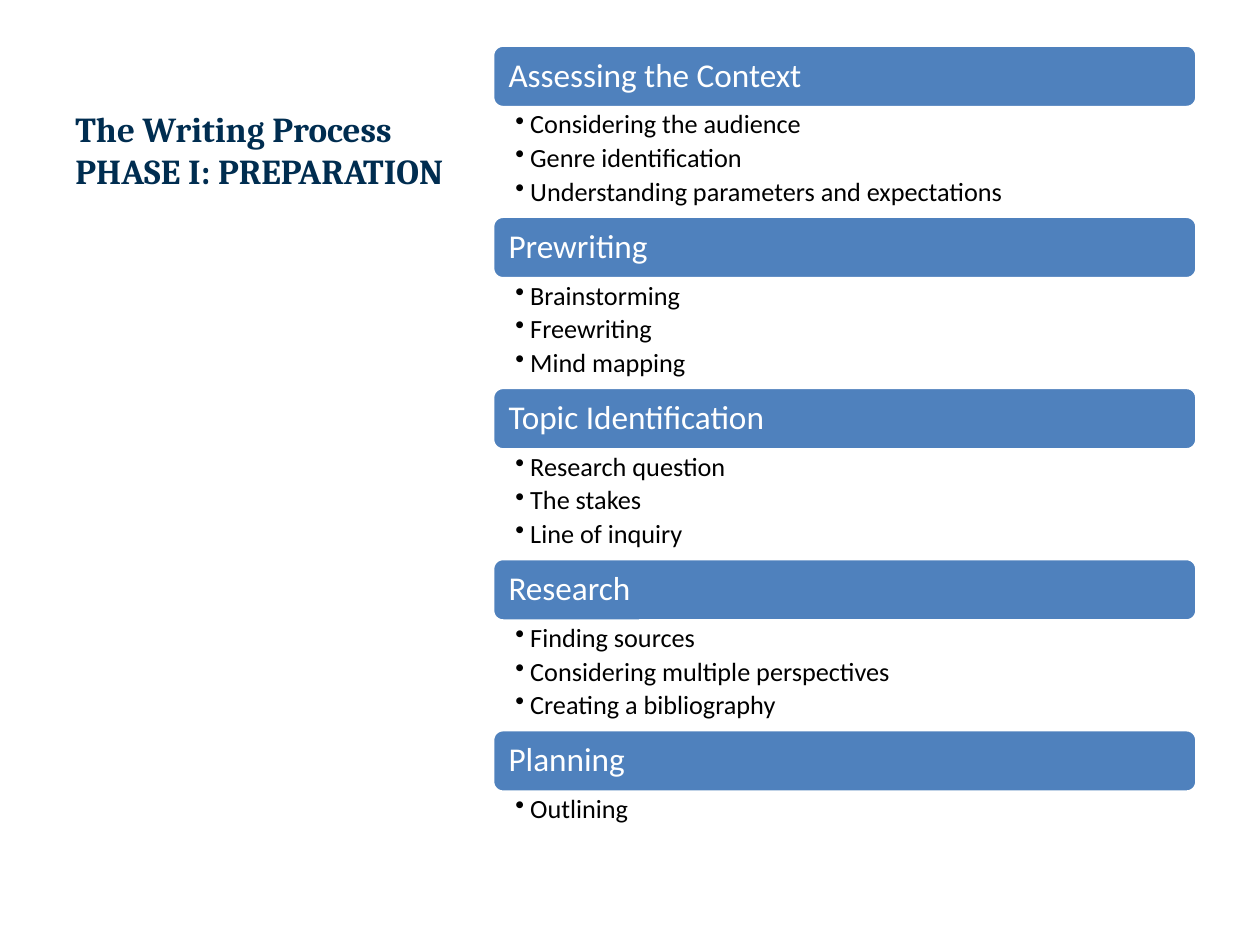
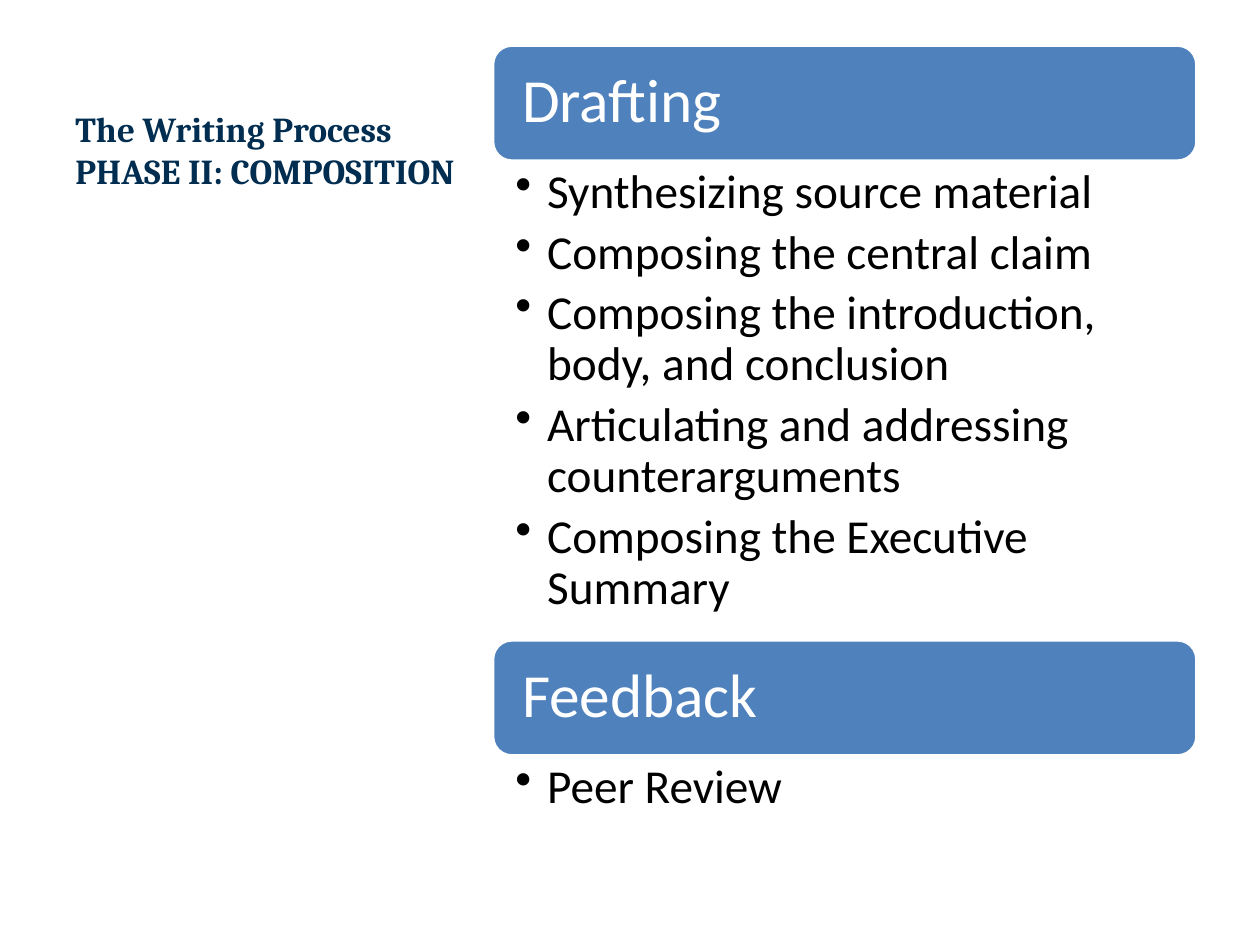
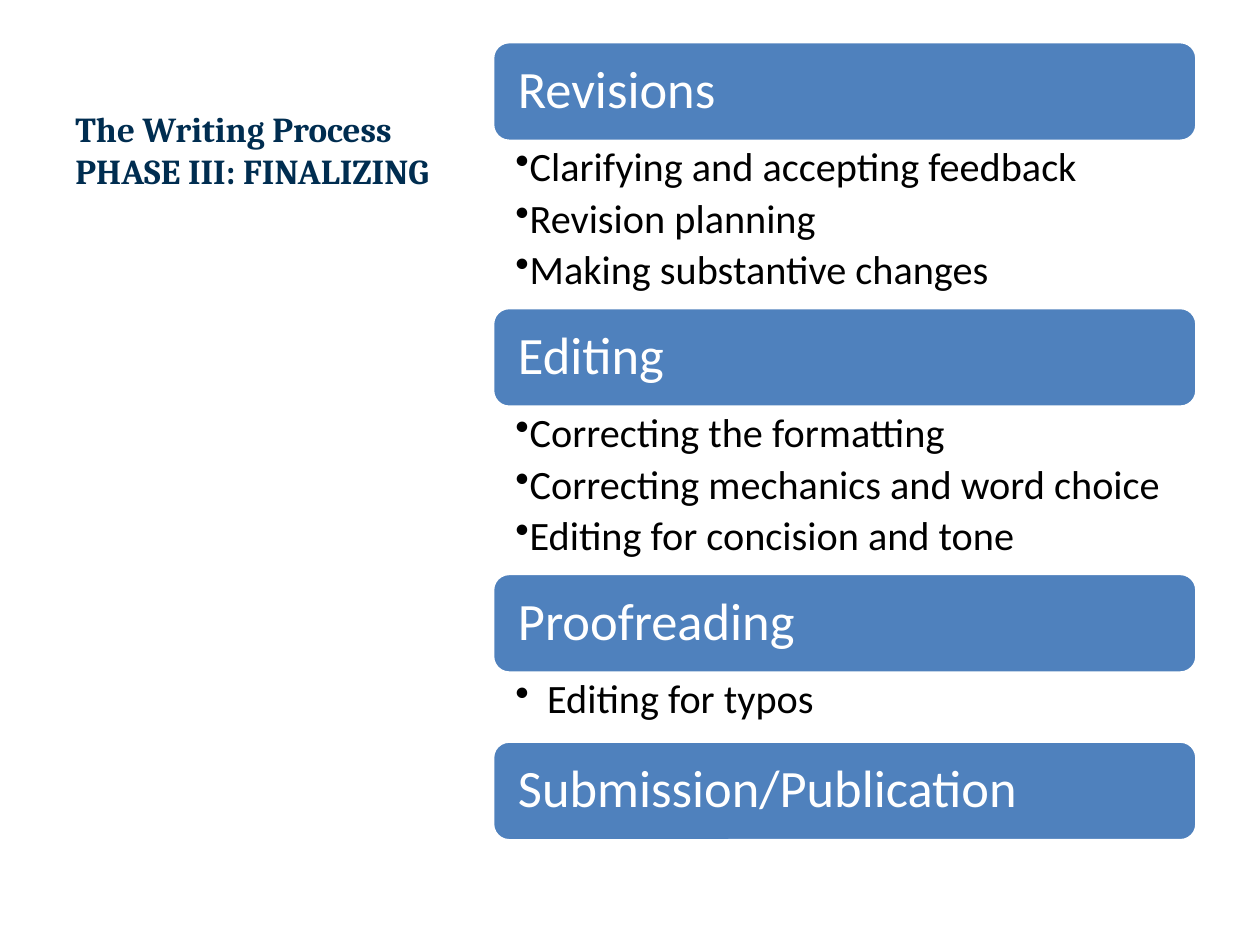
from lxml import etree
from pptx import Presentation
from pptx.dml.color import RGBColor
from pptx.enum.shapes import MSO_SHAPE
from pptx.enum.text import MSO_ANCHOR, MSO_AUTO_SIZE, PP_ALIGN
from pptx.oxml.ns import qn
from pptx.util import Cm, Pt

# Content: each section is (heading, list items, hanging indent in cm)
PHASES = [
    {
        "title": "PHASE I: PREPARATION",
        "top": 0.91, "bar_height": 1.26, "heading_size": 19, "item_size": 15,
        "list_heights": {1: 0.86, 3: 2.19},
        "sections": [
            ("Assessing the Context",
             ["Considering the audience", "Genre identification",
              "Understanding parameters and expectations"], 0.3),
            ("Prewriting", ["Brainstorming", "Freewriting", "Mind mapping"], 0.3),
            ("Topic Identification",
             ["Research question", "The stakes", "Line of inquiry"], 0.3),
            ("Research",
             ["Finding sources", "Considering multiple perspectives",
              "Creating a bibliography"], 0.3),
            ("Planning", ["Outlining"], 0.3),
        ],
    },
    {
        "title": "PHASE II: COMPOSITION",
        "top": 0.91, "bar_height": 2.34, "heading_size": 35, "item_size": 27,
        "list_heights": {1: 1.6, 5: 9.65},
        "sections": [
            ("Drafting",
             ["Synthesizing source material", "Composing the central claim",
              "Composing the introduction, body, and conclusion",
              "Articulating and addressing counterarguments",
              "Composing the Executive Summary"], 0.64),
            ("Feedback", ["Peer Review"], 0.64),
        ],
    },
    {
        "title": "PHASE III: FINALIZING",
        "top": 0.84, "bar_height": 2.01, "heading_size": 30, "item_size": 23,
        "list_heights": {0: 0, 1: 1.37, 3: 3.35},
        "sections": [
            ("Revisions",
             ["Clarifying and accepting feedback", "Revision planning",
              "Making substantive changes"], 0),
            ("Editing",
             ["Correcting the formatting", "Correcting mechanics and word choice",
              "Editing for concision and tone"], 0),
            ("Proofreading", ["Editing for typos"], 0.64),
            ("Submission/Publication", [], 0),
        ],
    },
]

# Shared style, lengths in cm
SERIES_TITLE = "The Writing Process"
NAVY, BLUE, WHITE, BLACK = "002D50", "4F81BD", "FFFFFF", "000000"
TITLE_FONT, BODY_FONT = "Cambria", "Calibri"
TITLE_BOX = (1.27, 0.76, 8.36, 3.23)
COLUMN_LEFT, COLUMN_WIDTH = 9.93, 14.2
LIST_INSET = 0.46


def color(hex_string):
    return RGBColor.from_string(hex_string)


def add_bullet(paragraph, hanging):
    properties = paragraph._p.get_or_add_pPr()
    properties.set("marL", str(Cm(hanging)))
    properties.set("indent", str(-Cm(hanging)))
    etree.SubElement(properties, qn("a:buChar")).set("char", "•")


def write_text(shape, lines, *, size, fill, font=BODY_FONT, bold=False,
               anchor=MSO_ANCHOR.TOP, insets=(0.25, 0.13, 0.25, 0.13),
               hanging=None, line_spacing=None, space_after=0):
    """Write one paragraph per line; a hanging indent makes it a bulleted list."""
    frame = shape.text_frame
    frame.word_wrap = True
    frame.auto_size = MSO_AUTO_SIZE.NONE
    frame.vertical_anchor = anchor
    (frame.margin_left, frame.margin_top,
     frame.margin_right, frame.margin_bottom) = map(Cm, insets)
    frame.text = "\n".join(lines)
    for paragraph in frame.paragraphs:
        if hanging is not None:
            paragraph.level = 1
            add_bullet(paragraph, hanging)
        paragraph.alignment = PP_ALIGN.LEFT
        paragraph.line_spacing = line_spacing
        paragraph.space_after = Pt(space_after)
        for run in paragraph.runs:
            run.font.name = font
            run.font.size = Pt(size)
            run.font.bold = bold
            run.font.color.rgb = color(fill)


def add_title(slide, phase_title):
    title = slide.shapes.title
    title.left, title.top, title.width, title.height = map(Cm, TITLE_BOX)
    write_text(title, [f"{SERIES_TITLE}\v{phase_title}"], size=20, fill=NAVY,
               font=TITLE_FONT, bold=True, anchor=MSO_ANCHOR.BOTTOM)


def add_heading_bar(slide, heading, top, height, size):
    bar = slide.shapes.add_shape(MSO_SHAPE.ROUNDED_RECTANGLE, Cm(COLUMN_LEFT),
                                 Cm(top), Cm(COLUMN_WIDTH), Cm(height))
    bar.shadow.inherit = False
    bar.fill.solid()
    bar.fill.fore_color.rgb = color(BLUE)
    bar.line.color.rgb = color(WHITE)
    bar.line.width = Pt(2)
    write_text(bar, [heading], size=size, fill=WHITE, anchor=MSO_ANCHOR.MIDDLE,
               insets=(0.0138 * size,) * 4, line_spacing=0.9)


def add_item_list(slide, items, top, height, size, hanging):
    box = slide.shapes.add_textbox(Cm(COLUMN_LEFT), Cm(top),
                                   Cm(COLUMN_WIDTH), Cm(height))
    edge = 0.005 * size
    write_text(box, items, size=size, fill=BLACK, hanging=hanging,
               insets=(LIST_INSET, edge, 0.025 * size, edge),
               line_spacing=0.9, space_after=0.2 * size)


def add_phase_slide(presentation, phase):
    title_only = presentation.slide_layouts[5]
    slide = presentation.slides.add_slide(title_only)
    add_title(slide, phase["title"])

    # Stack every heading bar and its list down the column
    top = phase["top"]
    for heading, items, hanging in phase["sections"]:
        add_heading_bar(slide, heading, top, phase["bar_height"],
                        phase["heading_size"])
        top += phase["bar_height"]
        list_height = phase["list_heights"][len(items)]
        if items:
            add_item_list(slide, items, top, list_height,
                          phase["item_size"], hanging)
        top += list_height


def main():
    presentation = Presentation()
    presentation.slide_width, presentation.slide_height = Cm(25.4), Cm(19.05)
    for phase in PHASES:
        add_phase_slide(presentation, phase)
    presentation.save("out.pptx")


if __name__ == "__main__":
    main()
